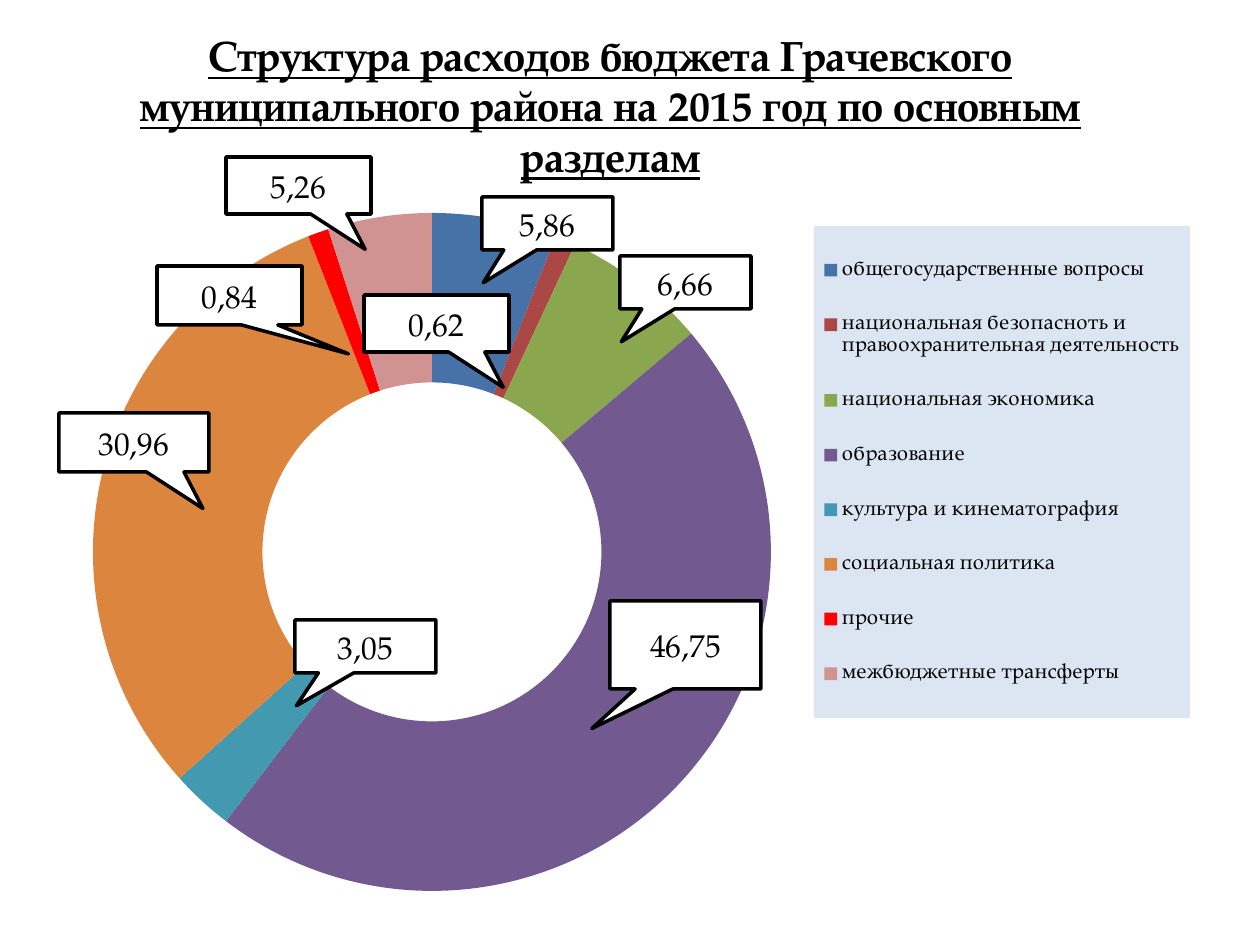
from lxml.etree import SubElement
from pptx import Presentation
from pptx.chart.data import CategoryChartData
from pptx.dml.color import RGBColor
from pptx.enum.chart import XL_CHART_TYPE as ChartType, XL_LEGEND_POSITION as LegendPosition
from pptx.enum.shapes import MSO_SHAPE as Shape
from pptx.enum.text import MSO_ANCHOR as Anchor, PP_ALIGN as Align
from pptx.oxml import parse_xml
from pptx.oxml.ns import nsdecls, qn
from pptx.util import Pt

PX = 914400 // 126
FONT = "TeX Gyre Pagella"
BLACK, WHITE, LEGEND_FILL = "000000", "FFFFFF", "DCE6F2"

# Category, share in percent, slice colour
EXPENSES = [
    ("общегосударственные вопросы", 5.86, "4672A8"),
    ("национальная безопасноть и правоохранительная деятельность", 0.62, "AB4744"),
    ("национальная экономика", 6.66, "8AA64F"),
    ("образование", 46.75, "725990"),
    ("культура и кинематография", 3.05, "4299B0"),
    ("социальная политика", 30.96, "DC853E"),
    ("прочие", 0.84, "FF0000"),
    ("межбюджетные трансферты", 5.26, "D19392"),
]

# Index of the expense, box in px, pointer tip relative to the box
CALLOUTS = [
    (2, (620, 256, 131, 53), (-0.49, 1.12)),
    (4, (295, 620, 141, 53), (-0.49, 1.12)),
    (3, (610, 601, 151, 88), (-0.62, 0.95)),
    (7, (226, 157, 145, 57), (0.46, 1.12)),
    (6, (157, 266, 145, 59), (0.82, 0.99)),
    (5, (59, 413, 150, 59), (0.46, 1.12)),
    (0, (482, 197, 131, 53), (-0.49, 1.12)),
    (1, (364, 295, 145, 57), (0.46, 1.12)),
]


def emu(box):
    return [value * PX for value in box]


def color(code):
    return RGBColor.from_string(code)


def style_font(font, size):
    font.name, font.size = FONT, Pt(size)
    font.color.rgb = color(BLACK)


def add_text(shape, text, size):
    frame = shape.text_frame
    frame.word_wrap = True
    frame.vertical_anchor = Anchor.MIDDLE
    para = frame.paragraphs[0]
    para.alignment = Align.CENTER
    span = para.add_run()
    span.text = text
    style_font(span.font, size)
    return span


def manual_layout(box, frame, inner=False):
    """Place box, in px relative to the chart, as shares of the chart frame."""
    layout = parse_xml(f"<c:layout {nsdecls('c')}><c:manualLayout/></c:layout>")
    left, top, width, height = box
    settings = [("layoutTarget", "inner")] if inner else []
    settings += [("xMode", "edge"), ("yMode", "edge"),
                 ("x", left / frame[2]), ("y", top / frame[3]),
                 ("w", width / frame[2]), ("h", height / frame[3])]
    for name, value in settings:
        SubElement(layout[0], qn(f"c:{name}")).set("val", str(value))
    return layout


def add_title(page, box):
    span = add_text(page.shapes.add_textbox(*emu(box)),
                    "Структура расходов бюджета Грачевского муниципального "
                    "района на 2015 год по основным разделам", 24)
    span.font.bold = span.font.underline = True


def add_legend(chart, frame):
    chart.has_legend = True
    legend = chart.legend
    legend.position = LegendPosition.RIGHT
    legend.include_in_layout = False
    style_font(legend.font, 12)
    element = legend._element
    for old in element.findall(qn("c:layout")):
        element.remove(old)
    element.find(qn("c:legendPos")).addnext(
        manual_layout((774, 29, 376, 492), frame))
    element.find(qn("c:overlay")).addnext(parse_xml(
        f"<c:spPr {nsdecls('c', 'a')}><a:solidFill>"
        f"<a:srgbClr val='{LEGEND_FILL}'/></a:solidFill></c:spPr>"))


def add_doughnut(page, box):
    data = CategoryChartData()
    data.categories = [name for name, _, _ in EXPENSES]
    data.add_series("Series 1", [round(share) for _, share, _ in EXPENSES])
    chart = page.shapes.add_chart(ChartType.DOUGHNUT, *emu(box), data).chart
    chart.has_title = False
    chart.font.name, chart.font.size = "Calibri", Pt(18)
    chart.font.color.rgb = color(BLACK)

    # Slices
    plot = chart.plots[0]
    plot.vary_by_categories = True
    for index, (_, _, code) in enumerate(EXPENSES):
        fill = plot.series[0].points[index].format.fill
        fill.solid()
        fill.fore_color.rgb = color(code)

    # Ring position and hole
    area = chart._chartSpace.chart.plotArea
    for old in area.findall(qn("c:layout")):
        area.remove(old)
    area.insert(0, manual_layout((53, 16, 678, 678), box, inner=True))
    area.find(".//" + qn("c:holeSize")).set("val", "50")
    add_legend(chart, box)


def add_callout(page, box, tip, share):
    callout = page.shapes.add_shape(Shape.RECTANGULAR_CALLOUT, *emu(box))
    callout.shadow.inherit = False
    callout.adjustments[0], callout.adjustments[1] = tip
    callout.fill.solid()
    callout.fill.fore_color.rgb = color(WHITE)
    callout.line.color.rgb = color(BLACK)
    callout.line.width = Pt(2)
    add_text(callout, f"{share:.2f}".replace(".", ","), 18)


def main():
    deck = Presentation()
    deck.slide_width, deck.slide_height = emu((1260, 945))
    page = deck.slides.add_slide(deck.slide_layouts[6])
    add_title(page, (75, 45, 1071, 120))
    add_doughnut(page, (40, 197, 1160, 717))
    for index, box, tip in CALLOUTS:
        add_callout(page, box, tip, EXPENSES[index][1])
    deck.save("out.pptx")


if __name__ == "__main__":
    main()
